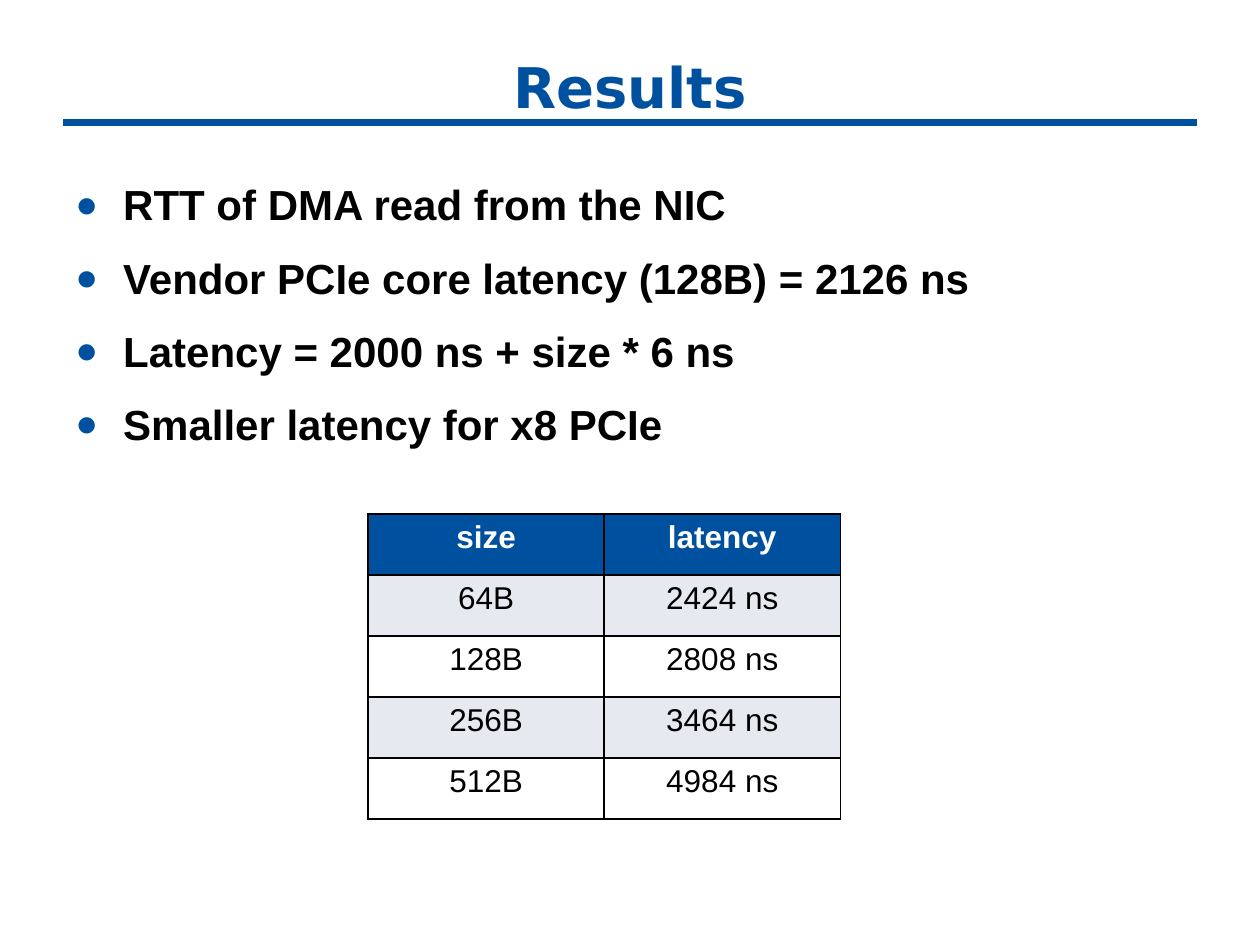
from dataclasses import dataclass

from lxml.etree import SubElement
from pptx import Presentation
from pptx.dml.color import RGBColor
from pptx.enum.shapes import MSO_CONNECTOR
from pptx.enum.text import MSO_ANCHOR, PP_ALIGN
from pptx.oxml.ns import qn
from pptx.util import Inches, Pt

# Content
TITLE = "Results"
BULLETS = [
    "RTT of DMA read from the NIC",
    "Vendor PCIe core latency (128B) = 2126 ns",
    "Latency = 2000 ns + size * 6 ns",
    "Smaller latency for x8 PCIe",
]
LATENCY_TABLE = [
    ("size", "latency"),
    ("64B", "2424 ns"),
    ("128B", "2808 ns"),
    ("256B", "3464 ns"),
    ("512B", "4984 ns"),
]


@dataclass(frozen=True)
class Theme:
    accent: str = "0050A0"
    band: str = "E7E9F0"
    white: str = "FFFFFF"
    black: str = "000000"
    title_font: str = "DejaVu Sans"
    body_font: str = "Arial"
    title_size: int = 32
    body_size: int = 24
    table_size: int = 18


THEME = Theme()
WIDTH, HEIGHT = Inches(10), Inches(7.5)
MARGIN = WIDTH // 20
CONTENT_WIDTH = WIDTH - 2 * MARGIN


def format_runs(paragraph, font_name, size, color, bold):
    for run in paragraph.runs:
        run.font.name = font_name
        run.font.size = Pt(size)
        run.font.bold = bold
        run.font.color.rgb = RGBColor.from_string(color)


def add_bullet(paragraph):
    properties = paragraph._p.get_or_add_pPr()
    properties.set("marL", str(Inches(0.38)))
    properties.set("indent", str(-Inches(0.38)))
    color = SubElement(properties, qn("a:buClr"))
    SubElement(color, qn("a:srgbClr"), val=THEME.accent)
    SubElement(properties, qn("a:buSzPct"), val="90000")
    SubElement(properties, qn("a:buFont"), typeface=THEME.body_font)
    SubElement(properties, qn("a:buChar"), char="●")


def add_borders(cell):
    properties = cell._tc.get_or_add_tcPr()
    for position, side in enumerate(("lnL", "lnR", "lnT", "lnB")):
        line = properties.makeelement(qn(f"a:{side}"), {"w": str(Pt(1))})
        fill = SubElement(line, qn("a:solidFill"))
        SubElement(fill, qn("a:srgbClr"), val=THEME.black)
        properties.insert(position, line)


presentation = Presentation()
presentation.slide_width, presentation.slide_height = WIDTH, HEIGHT
slide = presentation.slides.add_slide(presentation.slide_layouts[5])

# Rule under the title
rule_y = Inches(0.97)
rule = slide.shapes.add_connector(
    MSO_CONNECTOR.STRAIGHT, MARGIN, rule_y, WIDTH - MARGIN, rule_y)
rule.line.color.rgb = RGBColor.from_string(THEME.accent)
rule.line.width = Pt(4)
SubElement(rule._element.spPr, qn("a:effectLst"))

# Title
title = slide.shapes.title
title.left, title.top = MARGIN, Inches(0.33)
title.width, title.height = CONTENT_WIDTH, Inches(0.67)
title.text_frame.text = TITLE
title.text_frame.vertical_anchor = MSO_ANCHOR.BOTTOM
heading = title.text_frame.paragraphs[0]
heading.alignment = PP_ALIGN.CENTER
format_runs(heading, THEME.title_font, THEME.title_size, THEME.accent, True)

# Bullets
body = slide.shapes.add_textbox(
    MARGIN, Inches(1.33), CONTENT_WIDTH, Inches(5.37)).text_frame
body.word_wrap = True
body.margin_top = Inches(0.09)
body.text = "\n".join(BULLETS)
for index, paragraph in enumerate(body.paragraphs):
    paragraph.space_before = Pt(13 if index else 0)
    add_bullet(paragraph)
    format_runs(paragraph, THEME.body_font, THEME.body_size, THEME.black, True)

# Latency table
table = slide.shapes.add_table(
    len(LATENCY_TABLE), len(LATENCY_TABLE[0]),
    Inches(2.92), Inches(4.08), Inches(3.75), Inches(2.42)).table
for row_index, values in enumerate(LATENCY_TABLE):
    is_header = row_index == 0
    if is_header:
        fill_color, text_color = THEME.accent, THEME.white
    else:
        fill_color = THEME.band if row_index % 2 else THEME.white
        text_color = THEME.black
    for column_index, value in enumerate(values):
        cell = table.cell(row_index, column_index)
        cell.text_frame.text = value
        cell.fill.solid()
        cell.fill.fore_color.rgb = RGBColor.from_string(fill_color)
        add_borders(cell)
        paragraph = cell.text_frame.paragraphs[0]
        paragraph.alignment = PP_ALIGN.CENTER
        format_runs(paragraph, THEME.body_font, THEME.table_size,
                    text_color, is_header)

presentation.save("out.pptx")
